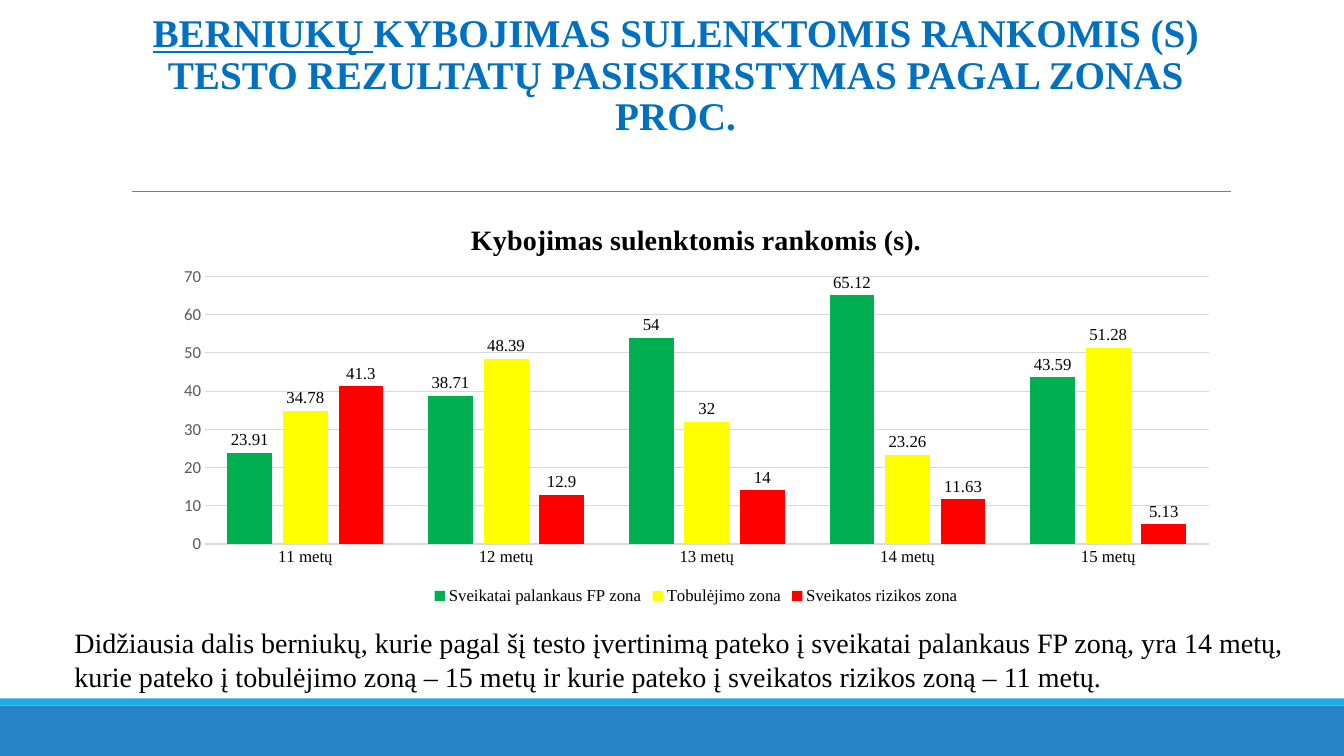
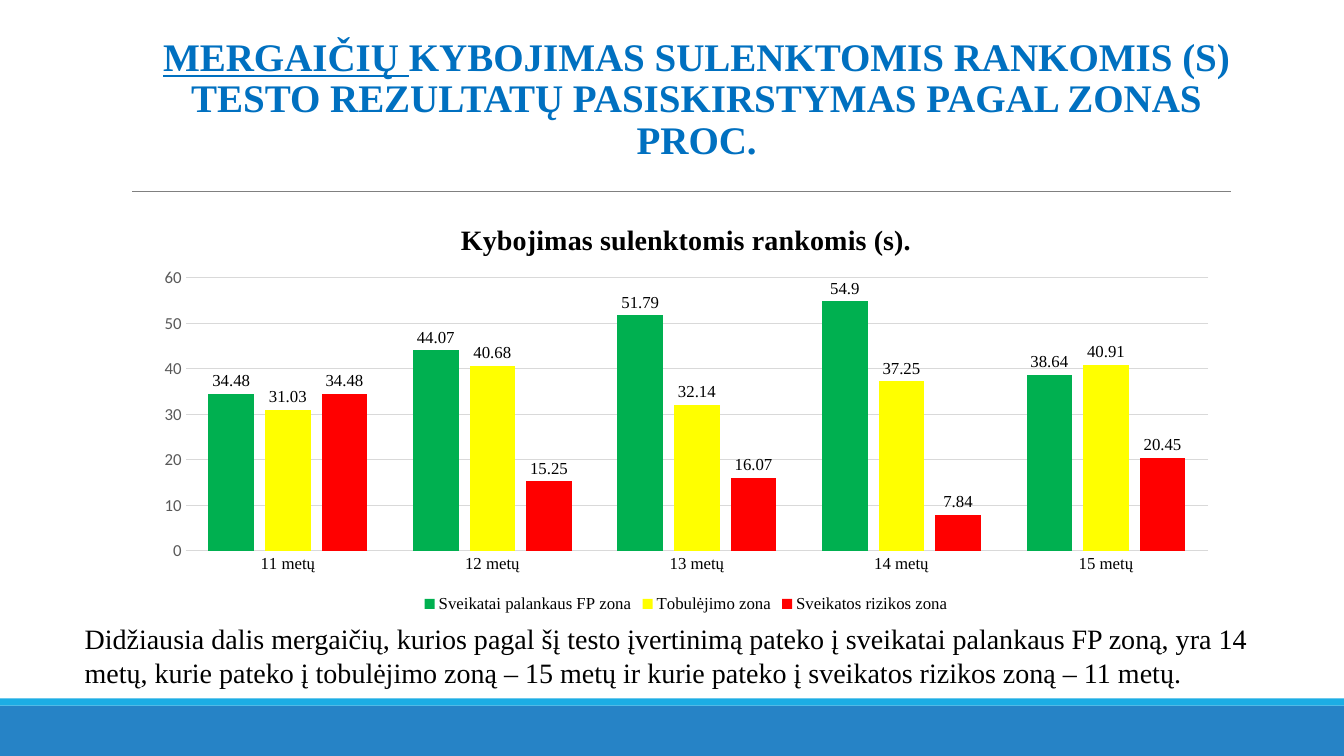
from lxml.etree import SubElement
from pptx import Presentation
from pptx.chart.data import CategoryChartData
from pptx.dml.color import RGBColor
from pptx.enum.chart import XL_CHART_TYPE, XL_LABEL_POSITION, XL_LEGEND_POSITION, XL_TICK_MARK
from pptx.enum.shapes import MSO_CONNECTOR, MSO_SHAPE
from pptx.enum.text import MSO_ANCHOR, MSO_AUTO_SIZE, PP_ALIGN
from pptx.oxml import parse_xml
from pptx.oxml.ns import nsdecls, qn
from pptx.util import Inches, Pt

SERIF, SANS = "Times New Roman", "Calibri"
AGES = [f"{age} metų" for age in range(11, 16)]
ZONES = {
    "Sveikatai palankaus FP zona": "00B050",
    "Tobulėjimo zona": "FFFF00",
    "Sveikatos rizikos zona": "FF0000",
}
TOPIC = "KYBOJIMAS SULENKTOMIS RANKOMIS (S) TESTO REZULTATŲ PASISKIRSTYMAS PAGAL ZONAS PROC."


def color(code):
    return RGBColor.from_string(code)


def style(font, size=12, name=SERIF, tint="000000", bold=False, under=False):
    font.size = Pt(size)
    font.name = name
    font.color.rgb = color(tint)
    font.bold = bold
    font.underline = under


def write(para, text, **look):
    run = para.add_run()
    run.text = text
    style(run.font, **look)


class Deck:
    blue, sky, gray, pale, ink = "2683C6", "1CADE4", "808080", "D9D9D9", "0070C0"

    def __init__(self):
        self.file = Presentation()
        self.file.slide_width = Inches(13.33)
        self.file.slide_height = Inches(7.5)

    def start(self):
        self.slide = self.file.slides.add_slide(self.file.slide_layouts[6])
        self.shapes = self.slide.shapes
        self.band(7, 0.5, self.blue)
        self.band(6.93, 0.07, self.sky)
        self.rule(1.31, 12.21, 1.9)

    def band(self, top, height, tint):
        bar = self.shapes.add_shape(
            MSO_SHAPE.RECTANGLE, 0, Inches(top), self.file.slide_width, Inches(height))
        bar.shadow.inherit = False
        bar.fill.solid()
        bar.fill.fore_color.rgb = color(tint)
        bar.line.fill.background()

    def rule(self, left, right, top):
        line = self.shapes.add_connector(
            MSO_CONNECTOR.STRAIGHT, Inches(left), Inches(top), Inches(right), Inches(top))
        line.line.color.rgb = color(self.gray)
        line.line.width = Pt(0.5)
        SubElement(line._element.spPr, qn("a:effectLst"))

    def box(self, area):
        frame = self.shapes.add_textbox(*map(Inches, area)).text_frame
        frame.word_wrap = True
        return frame

    def title(self, group, area, size, base):
        frame = self.box(area)
        frame.auto_size = MSO_AUTO_SIZE.NONE
        frame.vertical_anchor = MSO_ANCHOR.BOTTOM
        frame.margin_bottom = Inches(area[1] + area[3] - base)
        para = frame.paragraphs[0]
        para.alignment = PP_ALIGN.CENTER
        para.line_spacing = 0.88
        look = dict(size=size, tint=self.ink, bold=True)
        write(para, group + " ", under=True, **look)
        write(para, TOPIC, **look)

    def note(self, text, area):
        frame = self.box(area)
        frame.auto_size = MSO_AUTO_SIZE.SHAPE_TO_FIT_TEXT
        write(frame.paragraphs[0], text, size=20)

    def chart(self, rows, area, top):
        data = CategoryChartData()
        data.categories = AGES
        for zone, row in zip(ZONES, rows):
            data.add_series(zone, row)
        chart = self.shapes.add_chart(
            XL_CHART_TYPE.COLUMN_CLUSTERED, *map(Inches, area), data).chart
        style(chart.font, size=10, name=SANS)
        chart.has_title = True
        para = chart.chart_title.text_frame.paragraphs[0]
        write(para, "Kybojimas sulenktomis rankomis (s).", size=20, bold=True)
        chart.chart_title.include_in_layout = False
        chart.has_legend = True
        chart.legend.position = XL_LEGEND_POSITION.BOTTOM
        chart.legend.include_in_layout = False
        style(chart.legend.font)
        self.axes(chart, top)
        self.bars(chart.plots[0])
        self.place(chart, x=0.04, y=0.18, w=0.94, h=0.66)

    def axes(self, chart, top):
        ages, scale = chart.category_axis, chart.value_axis
        for axis in (ages, scale):
            axis.major_tick_mark = axis.minor_tick_mark = XL_TICK_MARK.NONE
        style(ages.tick_labels.font)
        ages.format.line.color.rgb = color(self.pale)
        ages.format.line.width = Pt(1)
        style(scale.tick_labels.font, name=SANS, tint="595959")
        scale.minimum_scale, scale.maximum_scale, scale.major_unit = 0, top, 10
        scale.format.line.fill.background()
        grid = scale.major_gridlines.format.line
        grid.color.rgb = color(self.pale)
        grid.width = Pt(0.75)

    def bars(self, plot):
        plot.gap_width, plot.overlap = 100, -24
        plot.vary_by_categories = False
        plot.has_data_labels = True
        labels = plot.data_labels
        labels.show_value = True
        labels.position = XL_LABEL_POSITION.OUTSIDE_END
        style(labels.font)
        for row, tint in zip(plot.series, ZONES.values()):
            row.format.fill.solid()
            row.format.fill.fore_color.rgb = color(tint)

    def place(self, chart, **parts):
        area = chart._chartSpace.chart.plotArea
        for old in area.findall(qn("c:layout")):
            area.remove(old)
        sizes = "".join(f'<c:{key} val="{part}"/>' for key, part in parts.items())
        area.insert(0, parse_xml(
            f'<c:layout {nsdecls("c")}><c:manualLayout><c:layoutTarget val="inner"/>'
            f'<c:xMode val="edge"/><c:yMode val="edge"/>{sizes}'
            '</c:manualLayout></c:layout>'))


def main():
    deck = Deck()

    deck.start()
    deck.title("BERNIUKŲ", (1.2, 0.31, 11, 1.59), size=28, base=1.38)
    deck.chart([
        (23.91, 38.71, 54, 65.12, 43.59),
        (34.78, 48.39, 32, 23.26, 51.28),
        (41.3, 12.9, 14, 11.63, 5.13),
    ], (1.61, 2.02, 10.59, 4.02), top=70)
    deck.note(
        "Didžiausia dalis berniukų, kurie pagal šį testo įvertinimą pateko į sveikatai "
        "palankaus FP zoną, yra 14 metų, kurie pateko į tobulėjimo zoną – 15 metų ir kurie "
        "pateko į sveikatos rizikos zoną – 11 metų.", (0.64, 6.16, 12.2, 0.77))

    deck.start()
    deck.title("MERGAIČIŲ", (1.41, 0.8, 11, 1.59), size=27.9, base=1.61)
    deck.chart([
        (34.48, 44.07, 51.79, 54.9, 38.64),
        (31.03, 40.68, 32.14, 37.25, 40.91),
        (34.48, 15.25, 16.07, 7.84, 20.45),
    ], (1.41, 2.02, 10.79, 4.1), top=60)
    deck.note(
        "Didžiausia dalis mergaičių, kurios pagal šį testo įvertinimą pateko į sveikatai "
        "palankaus FP zoną, yra 14 metų, kurie pateko į tobulėjimo zoną – 15 metų ir kurie "
        "pateko į sveikatos rizikos zoną – 11 metų.", (0.74, 6.12, 12.32, 0.77))

    deck.file.save("out.pptx")


if __name__ == "__main__":
    main()
